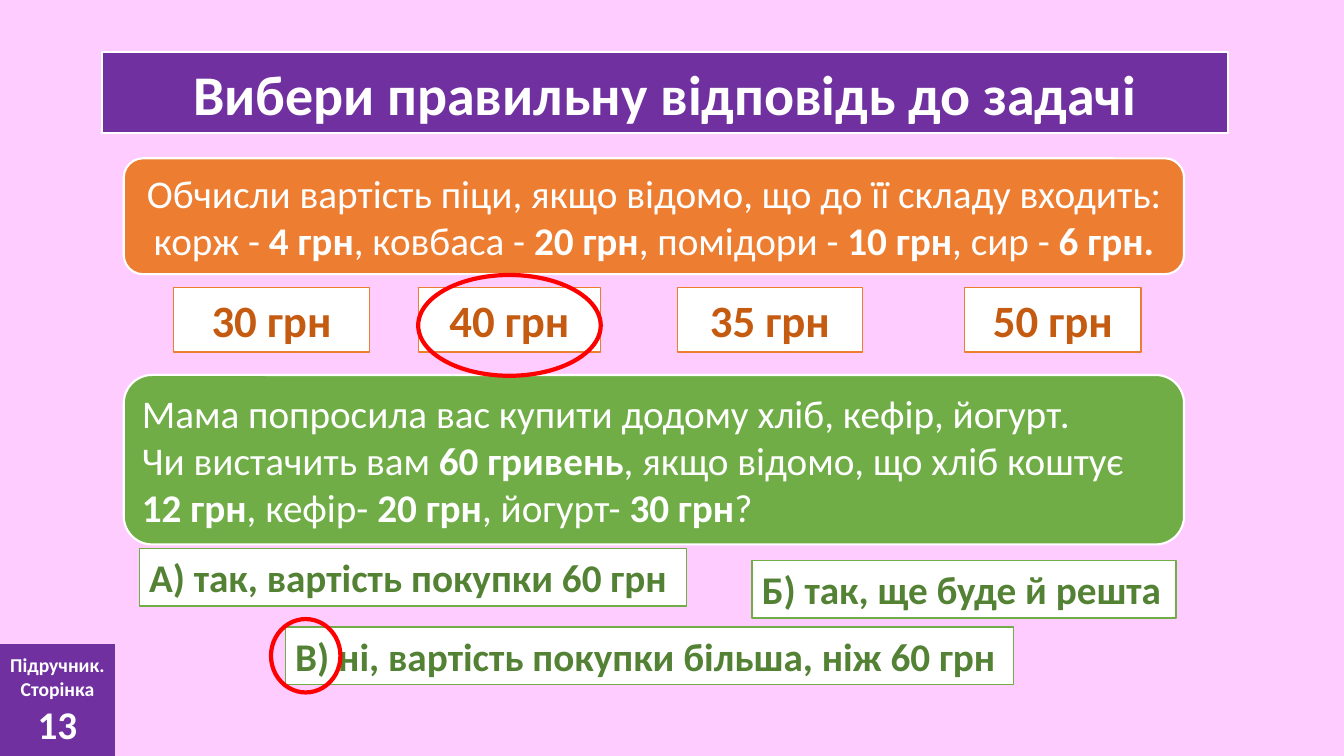
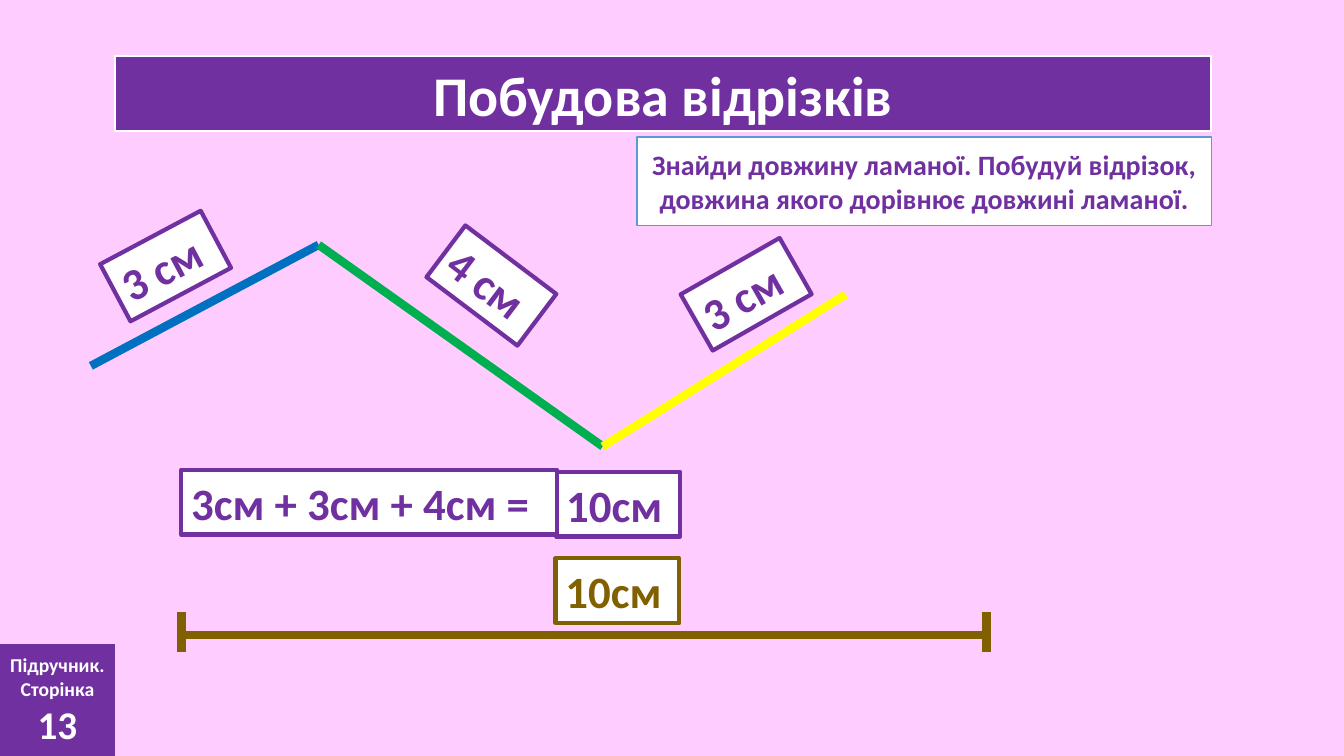
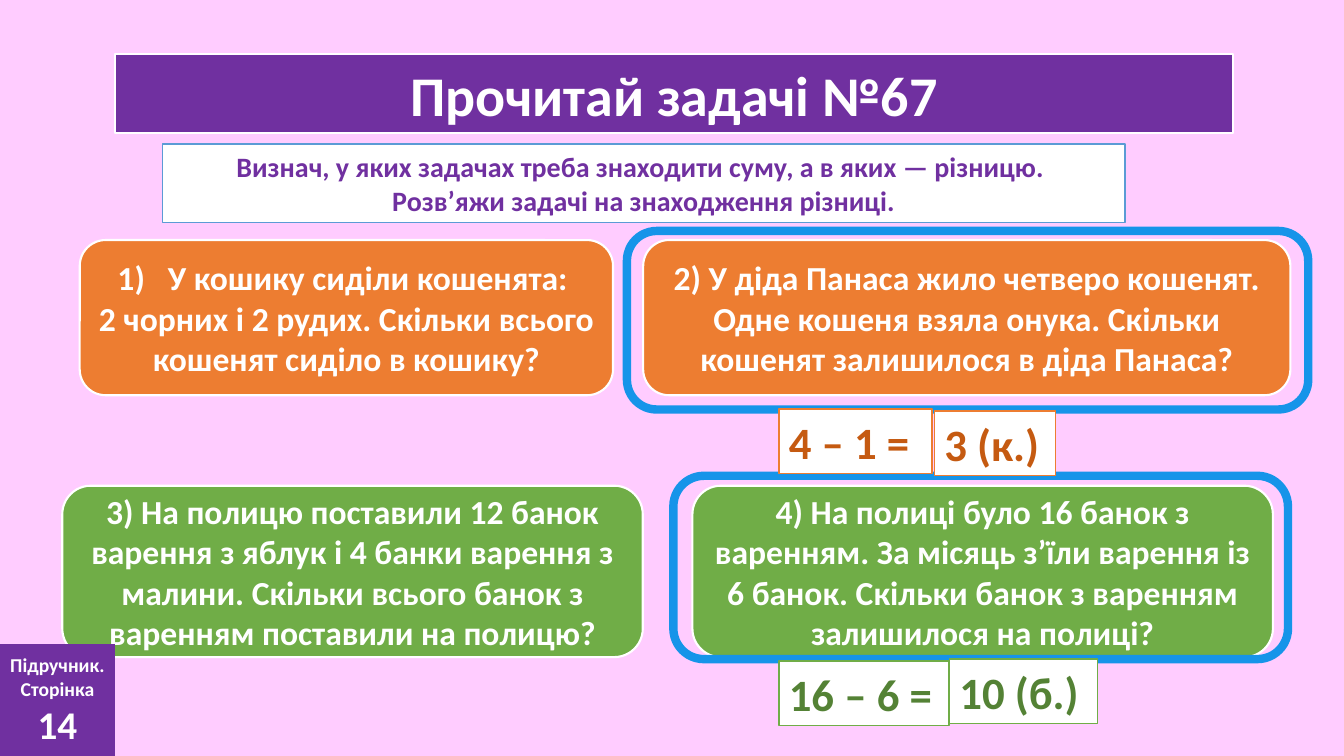
from lxml import etree
from pptx import Presentation
from pptx import util as u
from pptx.dml import color
from pptx.enum import shapes, text
from pptx.oxml import ns

FONT = "Calibri"
PINK, WHITE, PURPLE, RED = "FFCCFF", "FFFFFF", "7030A0", "FF0000"
ORANGE, DARK_ORANGE = "ED7D31", "C55A11"
GREEN, DARK_GREEN = "70AD47", "548235"
BROWN, LIGHT_BLUE, FRAME_BLUE = "806000", "5B9BD5", "1694E9"
RECT = shapes.MSO_SHAPE.RECTANGLE
ROUND = shapes.MSO_SHAPE.ROUNDED_RECTANGLE
OVAL = shapes.MSO_SHAPE.OVAL
LEFT, CENTER = text.PP_ALIGN.LEFT, text.PP_ALIGN.CENTER
ROW_HEIGHT = 1.63


def rgb(value):
    return color.RGBColor.from_string(value)


def add_box(slide, place, kind=RECT, fill=None, line=None, width=1.5):
    """Place is left, top, width and height in centimetres."""
    box = slide.shapes.add_shape(kind, *map(u.Cm, place))
    box.shadow.inherit = False
    if fill:
        box.fill.solid()
        box.fill.fore_color.rgb = rgb(fill)
    else:
        box.fill.background()
    if line:
        box.line.color.rgb = rgb(line)
        box.line.width = u.Pt(width)
    else:
        box.line.fill.background()
    return box


def write(box, words, size, ink, bold=True, align=CENTER):
    """Newlines part paragraphs; asterisks enclose words that are always bold."""
    frame = box.text_frame
    frame.word_wrap = True
    frame.vertical_anchor = text.MSO_ANCHOR.MIDDLE
    frame.text = words.replace("*", "")
    for para, source in zip(frame.paragraphs, words.split("\n")):
        para.alignment = align
        pieces = source.split("*")
        para.text = pieces[0]
        for piece in pieces[1:]:
            para.add_run().text = piece
        offset = 0 if pieces[0] else 1
        for index, span in enumerate(para.runs):
            if not pieces[0] and len(para.runs) == len(pieces):
                offset = 0
            span.font.name = FONT
            span.font.size = u.Pt(size)
            span.font.bold = bold or (index + offset) % 2 == 1
            span.font.color.rgb = rgb(ink)


def add_line(slide, start, end, ink):
    line = slide.shapes.add_connector(
        shapes.MSO_CONNECTOR.STRAIGHT, *map(u.Cm, start + end))
    line.line.color.rgb = rgb(ink)
    line.line.width = u.Pt(6)
    etree.SubElement(line._element.spPr, ns.qn("a:effectLst"))


def add_title(slide, place, words):
    write(add_box(slide, place, fill=PURPLE, line=WHITE), words, 40, WHITE)


def add_page_badge(slide, page):
    badge = add_box(slide, (0, 16.23, 2.9, 2.82), fill=PURPLE)
    write(badge, f"Підручник.\nСторінка\n{page}", 14, WHITE)
    badge.text_frame.paragraphs[-1].runs[0].font.size = u.Pt(28)


def add_hint(slide, place, words):
    write(add_box(slide, place, fill=WHITE, line=LIGHT_BLUE, width=1), words, 20, PURPLE)


def add_card(slide, place, fill, words, size=24, bold=True, align=CENTER):
    card = add_box(slide, place, ROUND, fill, WHITE)
    write(card, words, size, WHITE, bold, align)
    return card


def add_label(slide, place, words, ink, line, width=1, size=32, align=LEFT):
    label = add_box(slide, place, fill=WHITE, line=line, width=width)
    write(label, words, size, ink, align=align)
    return label


def number_paragraph(para):
    props = para._p.get_or_add_pPr()
    props.set("marL", str(u.Cm(1.27)))
    props.set("indent", str(-u.Cm(1.27)))
    etree.SubElement(props, ns.qn("a:buAutoNum"), type="arabicParenR")


def build_choice(slide):
    add_title(slide, (2.57, 1.32, 28.37, 2.03), "Вибери правильну відповідь до задачі")
    add_card(slide, (3.12, 3.99, 26.72, 2.92), ORANGE,
             "Обчисли вартість піци, якщо відомо, що до її складу входить: корж - *4 грн*, "
             "ковбаса - *20 грн*, помідори - *10 грн*, сир - *6 грн.*", 28, False)
    add_card(slide, (3.12, 9.45, 26.72, 4.27), GREEN,
             "Мама попросила вас купити додому хліб, кефір, йогурт.\n"
             "Чи вистачить вам *60 гривень*, якщо відомо, що хліб коштує *12 грн*, "
             "кефір- *20 грн*, йогурт- *30 грн*?", 28, False, LEFT)
    for left, width, price in ((4.37, 4.95, 30), (10.54, 4.6, 40),
                               (17.07, 4.67, 35), (24.31, 4.45, 50)):
        add_label(slide, (left, 7.24, width, ROW_HEIGHT), f"{price} грн",
                  DARK_ORANGE, ORANGE, align=CENTER)
    for left, top, width, words in (
            (3.51, 13.82, 13.79, "А) так, вартість покупки 60 грн"),
            (18.95, 14.12, 10.69, "Б) так, ще буде й решта"),
            (7.19, 15.8, 18.36, "В) ні, вартість покупки більша, ніж 60 грн")):
        add_label(slide, (left, top, width, 1.45), words, DARK_GREEN, GREEN, size=28)
    for ring in ((10.54, 6.93, 4.6, 2.54), (6.83, 15.6, 1.75, 1.85)):
        add_box(slide, ring, OVAL, line=RED, width=3)


def build_segments(slide):
    add_title(slide, (2.9, 1.42, 27.61, 1.88), "Побудова відрізків")
    corners = ((2.29, 9.22), (8.03, 6.17), (15.19, 11.25), (21.31, 7.42))
    for start, end, ink in zip(corners, corners[1:], ("0070C0", "00B050", "FFFF00")):
        add_line(slide, start, end, ink)
    add_hint(slide, (16.05, 3.45, 14.48, 2.24),
             "Знайди довжину ламаної. Побудуй відрізок, довжина якого дорівнює довжині ламаної.")
    for left, top, angle, words in ((2.74, 5.89, 332, "3 см"), (10.95, 6.38, 37, "4 см"),
                                    (17.37, 6.6, 330.3, "3 см")):
        label = add_label(slide, (left, top, 2.87, ROW_HEIGHT), words, PURPLE, PURPLE, 3)
        label.rotation = angle
    for left, top, width, words, ink in (
            (14.02, 11.89, 3.12, "10см", PURPLE),
            (4.57, 11.84, 9.47, "3см + 3см + 4см =", PURPLE),
            (14, 14.07, 3.12, "10см", BROWN)):
        add_label(slide, (left, top, width, ROW_HEIGHT), words, ink, ink, 3)
    first, last, level = 4.57, 24.86, 16
    add_line(slide, (first, level), (last, level), BROWN)
    for end in (first, last):
        add_line(slide, (end, level - 0.57), (end, level + 0.42), BROWN)


def build_problems(slide):
    add_title(slide, (2.9, 1.37, 28.17, 1.98), "Прочитай задачі №67")
    kittens = add_card(slide, (2.01, 6.05, 13.44, 3.91), ORANGE,
                       "У кошику сиділи кошенята: \n"
                       "2 чорних і 2 рудих. Скільки всього кошенят сиділо в кошику?")
    number_paragraph(kittens.text_frame.paragraphs[0])
    for place, fill, words in (
            ((16.21, 6.05, 16.31, 3.91), ORANGE,
             "2) У діда Панаса жило четверо кошенят. Одне кошеня взяла онука. "
             "Скільки кошенят залишилося в діда Панаса?"),
            ((1.57, 12.24, 14.63, 4.32), GREEN,
             "3) На полицю поставили 12 банок варення з яблук і 4 банки варення з малини. "
             "Скільки всього банок з варенням поставили на полицю?"),
            ((17.45, 12.24, 14.63, 4.32), GREEN,
             "4) На полиці було 16 банок з варенням. За місяць з’їли варення із 6 банок. "
             "Скільки банок з варенням залишилося на полиці?")):
        add_card(slide, place, fill, words)
    for frame in ((15.8, 5.82, 17.17, 4.5), (16.97, 11.99, 15.49, 4.62)):
        add_box(slide, frame, ROUND, line=FRAME_BLUE, width=6)
    add_hint(slide, (4.09, 3.63, 24.26, 1.98),
             "Визнач, у яких задачах треба знаходити суму, а в яких — різницю. \n"
             "Розв’яжи задачі на знаходження різниці.")
    for left, top, width, words, ink, line in (
            (19.63, 10.31, 3.86, "4 – 1 =", DARK_ORANGE, ORANGE),
            (23.55, 10.36, 3.05, "3 (к.)", DARK_ORANGE, ORANGE),
            (19.63, 16.66, 4.29, "16 – 6 =", DARK_GREEN, GREEN),
            (23.93, 16.61, 3.73, "10 (б.)", DARK_GREEN, GREEN)):
        add_label(slide, (left, top, width, ROW_HEIGHT), words, ink, line)


def main():
    deck = Presentation()
    deck.slide_width, deck.slide_height = u.Cm(33.87), u.Cm(19.05)
    backdrop = deck.slide_master.background.fill
    backdrop.solid()
    backdrop.fore_color.rgb = rgb(PINK)
    for build, page in ((build_choice, 13), (build_segments, 13), (build_problems, 14)):
        slide = deck.slides.add_slide(deck.slide_layouts[6])
        build(slide)
        add_page_badge(slide, page)
    deck.save("out.pptx")


if __name__ == "__main__":
    main()
